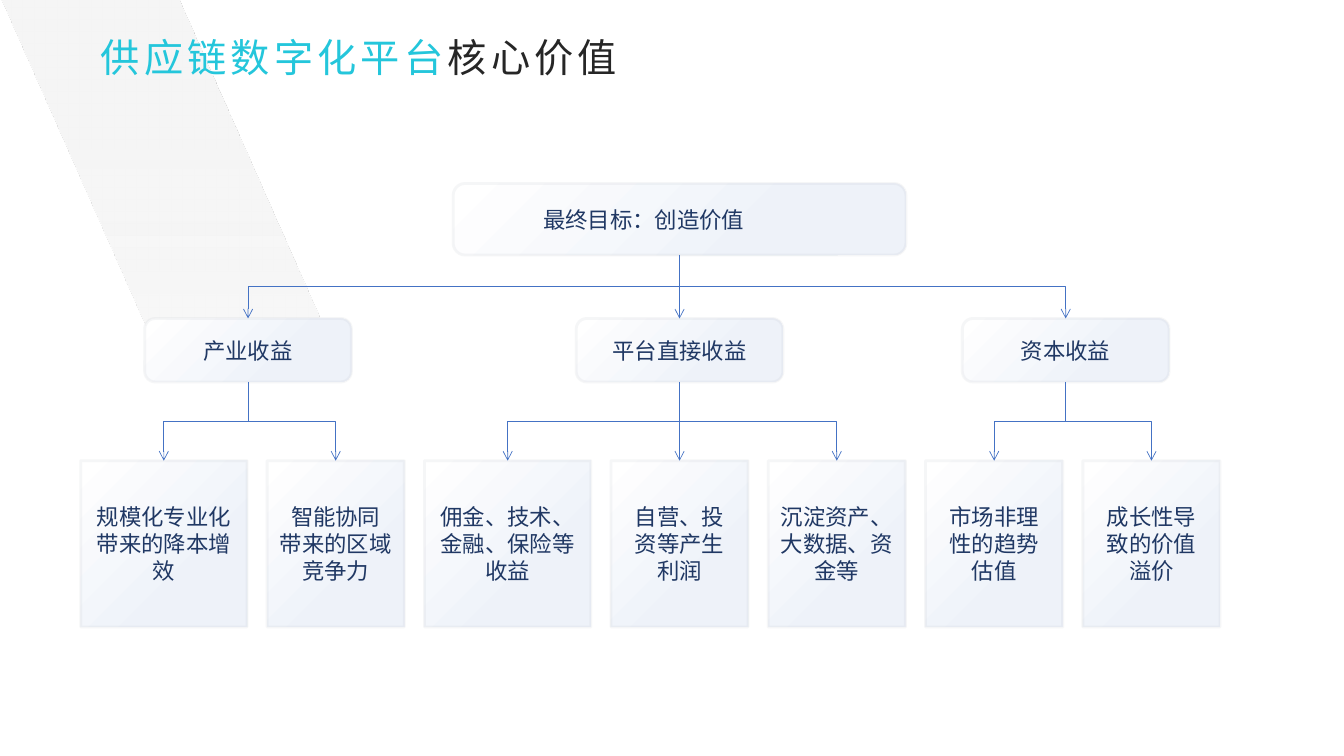
from lxml.etree import SubElement
from pptx import Presentation
from pptx.dml.color import RGBColor
from pptx.enum.shapes import MSO_CONNECTOR as CXN, MSO_SHAPE as SHAPE
from pptx.enum.text import MSO_ANCHOR as ANCHOR, MSO_AUTO_SIZE as AUTO, PP_ALIGN as ALIGN
from pptx.oxml.ns import qn
from pptx.util import Emu, Inches, Pt

FONT = "Noto Sans CJK SC"
CYAN = RGBColor(0x24, 0xC6, 0xDB)
INK = RGBColor(0x26, 0x26, 0x26)
NAVY = RGBColor(0x20, 0x38, 0x64)
WHITE = RGBColor(0xFF, 0xFF, 0xFF)
MIST = RGBColor(0xEE, 0xF2, 0xF9)
EDGE = RGBColor(0xBF, 0xC3, 0xCB)
BLUE = RGBColor(0x44, 0x72, 0xC4)
PALE = RGBColor(0xF5, 0xF5, 0xF5)

# Rows (top, height) and columns of the tree, in inches
GOAL_ROW, BRANCH_ROW, LEAF_ROW = (1.82, 0.71), (3.16, 0.63), (4.57, 1.65)
GOAL_W, BRANCH_W, WIDE, NARROW = 4.49, 2.05, 1.65, 1.36
LEFT, GAP, MIDDLE = 0.8, 0.2, 6.74

GOAL = "最终目标：创造价值"
# Branch: (name, centre, leaves); leaf: (width, paragraphs)
BRANCHES = [
    ("产业收益", 2.46, [
        (WIDE, ["规模化专业化带来的降本增效"]),
        (NARROW, ["智能协同", "带来的区域竞争力"])]),
    ("平台直接收益", MIDDLE, [
        (WIDE, ["佣金、技术、金融、保险等收益"]),
        (NARROW, ["自营、投", "资等产生", "利润"]),
        (NARROW, ["沉淀资产、", "大数据、资金等"])]),
    ("资本收益", 10.57, [
        (NARROW, ["市场非理", "性的趋势", "估值"]),
        (NARROW, ["成长性导", "致的价值", "溢价"])]),
]


def add_text(p, text, size=16, color=NAVY, align=ALIGN.CENTER, spacing=0):
    p.alignment = align
    r = p.add_run()
    r.text = text
    r.font.size = Pt(size)
    r.font.name = FONT
    r.font.color.rgb = color
    rpr = r.font._element
    if spacing:
        rpr.set("spc", str(spacing * 100))
    SubElement(rpr, qn("a:ea")).set("typeface", FONT)


def set_alpha(fill_parent, percent):
    """Make the last colour below an element partly transparent."""
    color = list(fill_parent.iter(qn("a:srgbClr")))[-1]
    SubElement(color, qn("a:alpha")).set("val", str(percent * 1000))


def set_gradient(shape, angle, *stops):
    shape.fill.gradient()
    shape.fill.gradient_angle = angle
    for stop, (position, color) in zip(shape.fill.gradient_stops, stops):
        stop.position = position
        stop.color.rgb = color


def add_title(s):
    title = s.shapes.title
    title.left, title.top, title.width, title.height = map(Inches, (0.9, 0.28, 5.42, 0.57))
    tf = title.text_frame
    tf.word_wrap = False
    tf.auto_size = AUTO.NONE
    tf.vertical_anchor = ANCHOR.TOP
    for text, color in (("供应链数字化平台", CYAN), ("核心价值", INK)):
        add_text(tf.paragraphs[0], text, size=28, color=color, align=ALIGN.LEFT, spacing=3)


def add_band(s):
    """Slanted band behind the title."""
    points = [(Inches(x), Inches(y))
              for x, y in ((1.76, -0.03), (0, -0.03), (1.52, 3.4), (3.28, 3.4))]
    builder = s.shapes.build_freeform(*points[0])
    builder.add_line_segments(points[1:])
    band = builder.convert_to_shape()
    band.shadow.inherit = False
    band.line.fill.background()
    set_gradient(band, 270, (0.09, PALE), (1, PALE))
    set_alpha(band.element.spPr.find(qn("a:gradFill")), 76)
    s.shapes.title.element.addprevious(band.element)


def add_box(s, centre, width, row, paragraphs, rounding=None, right_inset=0.1):
    top, height = row
    box = s.shapes.add_shape(SHAPE.ROUNDED_RECTANGLE, Inches(centre - width / 2),
                             Inches(top), Inches(width), Inches(height))
    if rounding is not None:
        box.adjustments[0] = rounding
    box.shadow.inherit = False
    set_gradient(box, 315, (0, WHITE), (0.7, MIST))
    box.line.color.rgb = EDGE
    box.line.width = Pt(2)
    set_alpha(box.element.spPr.find(qn("a:ln")), 15)
    tf = box.text_frame
    tf.word_wrap = True
    tf.vertical_anchor = ANCHOR.MIDDLE
    tf.margin_right = Inches(right_inset)
    for i, text in enumerate(paragraphs):
        add_text(tf.add_paragraph() if i else tf.paragraphs[0], text)
    return box


def link(s, parent, child):
    """Arrow from the foot of one box to the top of another."""
    x1, y1 = parent.left + parent.width // 2, parent.top + parent.height
    x2, y2 = child.left + child.width // 2, child.top
    dx, dy = x2 - x1, y2 - y1
    bent = abs(dx) > Inches(0.05)
    cxn = s.shapes.add_connector(CXN.ELBOW if bent else CXN.STRAIGHT, x1, y1, x2, y2)
    cxn.begin_connect(parent, 2)
    cxn.end_connect(child, 0)
    if bent:  # an elbow runs sideways first, so it is turned to run downwards
        cxn.left, cxn.top = Emu((x1 + x2 - dy) // 2), Emu((y1 + y2 - abs(dx)) // 2)
        cxn.width, cxn.height = Emu(dy), Emu(abs(dx))
        xfrm = cxn.element.spPr.find(qn("a:xfrm"))
        xfrm.set("flipH", "1" if dx > 0 else "0")
        xfrm.set("rot", str((270 if dx > 0 else 90) * 60000))
    cxn.line.color.rgb = BLUE
    cxn.line.width = Pt(0.5)
    SubElement(cxn.line._get_or_add_ln(), qn("a:tailEnd")).set("type", "arrow")
    SubElement(cxn.element.spPr, qn("a:effectLst"))


def main():
    prs = Presentation()
    prs.slide_width, prs.slide_height = Inches(13.33), Inches(7.5)
    s = prs.slides.add_slide(prs.slide_layouts[5])
    add_title(s)
    add_band(s)

    goal = add_box(s, MIDDLE, GOAL_W, GOAL_ROW, [GOAL], right_inset=0.81)
    left = LEFT
    for name, centre, leaves in BRANCHES:
        branch = add_box(s, centre, BRANCH_W, BRANCH_ROW, [name])
        link(s, goal, branch)
        for width, paragraphs in leaves:
            leaf = add_box(s, left + width / 2, width, LEAF_ROW, paragraphs, rounding=0)
            link(s, branch, leaf)
            left += width + GAP
    prs.save("out.pptx")


if __name__ == "__main__":
    main()
